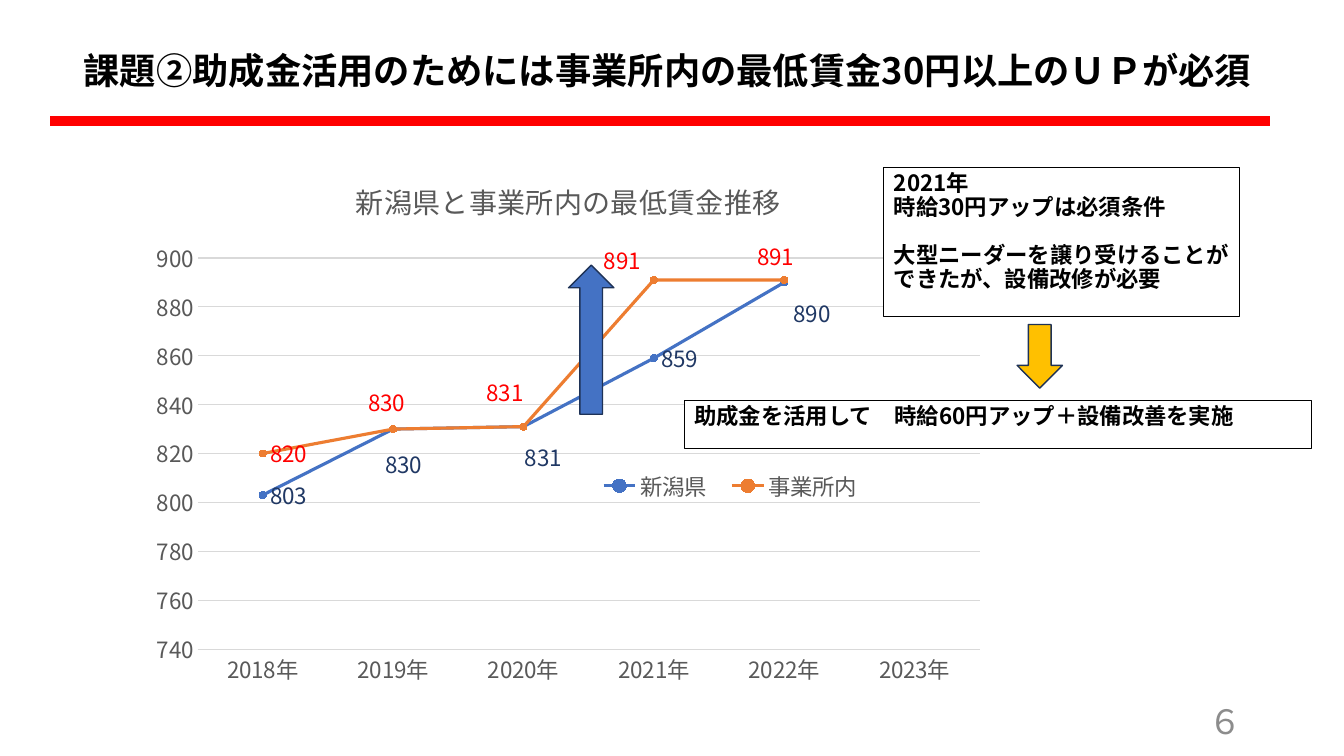
from dataclasses import dataclass, field

from lxml.etree import SubElement
from pptx import Presentation
from pptx.chart.data import CategoryChartData
from pptx.dml.color import RGBColor
from pptx.enum.chart import (XL_CHART_TYPE as ChartType, XL_LABEL_POSITION as LabelPosition,
                             XL_LEGEND_POSITION as LegendPosition, XL_MARKER_STYLE as Marker,
                             XL_TICK_MARK as TickMark)
from pptx.enum.shapes import MSO_CONNECTOR as Connector, MSO_SHAPE as ShapeKind
from pptx.enum.text import MSO_ANCHOR as Anchor, MSO_AUTO_SIZE as AutoSize, PP_ALIGN as Align
from pptx.oxml import parse_xml
from pptx.oxml.ns import nsdecls, qn
from pptx.util import Emu, Pt

PX = 9144  # 100 px to the inch
SLIDE_SIZE = Emu(12192000), Emu(6858000)
LABEL_EXTENSION = (
    f'<c:extLst {nsdecls("c")}><c:ext uri="{{CE6537A1-D6FC-4f65-9D91-7224C49458BB}}"'
    ' xmlns:c15="http://schemas.microsoft.com/office/drawing/2012/chart">'
    '<c15:showLeaderLines val="0"/></c:ext></c:extLst>')


@dataclass(frozen=True)
class Theme:
    font: str = "Noto Sans CJK JP"
    black: str = "000000"
    white: str = "FFFFFF"
    red: str = "FF0000"
    blue: str = "4472C4"
    orange: str = "ED7D31"
    gold: str = "FFC000"
    navy: str = "203864"
    arrow_line: str = "1E3256"
    chart_gray: str = "595959"
    grid_gray: str = "D9D9D9"
    number_gray: str = "8C8C8C"
    title_size: float = 25.9
    chart_title_size: float = 20
    body_size: float = 16
    number_size: float = 24


THEME = Theme()


@dataclass(frozen=True)
class Box:
    left: int
    top: int
    width: int
    height: int

    def emu(self) -> list[Emu]:
        return [Emu(v * PX) for v in (self.left, self.top, self.width, self.height)]


@dataclass(frozen=True)
class Wage:
    name: str
    values: tuple
    color: str
    label_color: str
    label_shifts: dict = field(default_factory=dict)  # point index -> (x, y) in px


@dataclass(frozen=True)
class Arrow:
    kind: ShapeKind
    box: Box
    fill: str


@dataclass(frozen=True)
class Note:
    box: Box
    lines: tuple
    gap_before: int = -1  # index of the line that follows a gap


CHART_BOX = Box(139, 155, 851, 584)
YEARS = [f"{year}年" for year in range(2018, 2024)]
WAGES = (
    Wage("新潟県", (803, 830, 831, 859, 890, None), THEME.blue, THEME.navy,
         {1: (-15, 35), 2: (-6, 30), 4: (2, 30)}),
    Wage("事業所内", (820, 830, 831, 891, 891, None), THEME.orange, THEME.red,
         {1: (-32, -27), 2: (-44, -34), 3: (-57, -20), 4: (-34, -24)}),
)
ARROWS = (
    Arrow(ShapeKind.UP_ARROW, Box(564, 263, 45, 148), THEME.blue),
    Arrow(ShapeKind.DOWN_ARROW, Box(1009, 322, 45, 63), THEME.gold),
)
NOTES = (
    Note(Box(679, 397, 622, 48), ("助成金を活用して　時給60円アップ＋設備改善を実施",)),
    Note(Box(877, 166, 353, 148),
         ("2021年", "時給30円アップは必須条件",
          "大型ニーダーを譲り受けることができたが、設備改修が必要"), gap_before=2),
)


def rgb(color: str) -> RGBColor:
    return RGBColor.from_string(color)


def style_font(font, size: float, color: str, bold: bool = False) -> None:
    font.size, font.bold, font.name = Pt(size), bold, THEME.font
    font.color.rgb = rgb(color)
    east_asian = SubElement(font._element, qn("a:ea"))
    east_asian.set("typeface", THEME.font)


def style_line(line, color: str, width: float) -> None:
    line.color.rgb = rgb(color)
    line.width = Pt(width)


def chart_layout(x: float, y: float, w: float = 0, h: float = 0, inner: bool = False,
                 edge: bool = True):
    """Manual layout from px within the chart frame."""
    parts = '<c:layoutTarget val="inner"/>' if inner else ""
    if edge:
        parts += '<c:xMode val="edge"/><c:yMode val="edge"/>'
    lengths = {"x": x / CHART_BOX.width, "y": y / CHART_BOX.height}
    if w:
        lengths |= {"w": w / CHART_BOX.width, "h": h / CHART_BOX.height}
    parts += "".join(f'<c:{key} val="{value:.4f}"/>' for key, value in lengths.items())
    return parse_xml(f'<c:layout {nsdecls("c")}><c:manualLayout>{parts}</c:manualLayout></c:layout>')


def set_layout(parent, layout, after: str | None = None) -> None:
    for existing in parent.findall(qn("c:layout")):
        parent.remove(existing)
    if after:
        parent.find(qn(after)).addnext(layout)
    else:
        parent.insert(0, layout)


def style_series(series, wage: Wage) -> None:
    series.smooth = False
    style_line(series.format.line, wage.color, 2.25)
    series.marker.style, series.marker.size = Marker.CIRCLE, 5
    series.marker.format.fill.solid()
    series.marker.format.fill.fore_color.rgb = rgb(wage.color)
    style_line(series.marker.format.line, wage.color, 0.75)
    labels = series.data_labels
    labels.show_value, labels.position = True, LabelPosition.RIGHT
    style_font(labels.font, THEME.body_size, wage.label_color)
    for index in wage.label_shifts:
        label = series.points[index].data_label
        label.position = LabelPosition.RIGHT
        style_font(label.font, THEME.body_size, wage.label_color)
    for element, shift in zip(labels._element.findall(qn("c:dLbl")), wage.label_shifts.values()):
        set_layout(element, chart_layout(*shift, edge=False), "c:idx")
    # Moved labels have no leader lines
    for leader in labels._element.findall(qn("c:showLeaderLines")):
        leader.set("val", "0")
    labels._element.append(parse_xml(LABEL_EXTENSION))


def add_wage_chart(slide) -> None:
    data = CategoryChartData()
    data.categories = YEARS
    for wage in WAGES:
        data.add_series(wage.name, wage.values)
    chart = slide.shapes.add_chart(ChartType.LINE_MARKERS, *CHART_BOX.emu(), data).chart
    style_font(chart.font, THEME.body_size, THEME.chart_gray)

    # Chart title, plot and legend places
    chart.has_title = True
    paragraph = chart.chart_title.text_frame.paragraphs[0]
    paragraph.text = "新潟県と事業所内の最低賃金推移"
    style_font(paragraph.font, THEME.chart_title_size, THEME.chart_gray)
    set_layout(chart.chart_title._element, chart_layout(209, 16), "c:tx")
    set_layout(chart._chartSpace.chart.plotArea, chart_layout(57, 101, 776, 388, inner=True))
    chart.has_legend = True
    chart.legend.position, chart.legend.include_in_layout = LegendPosition.BOTTOM, False
    style_font(chart.legend.font, THEME.body_size, THEME.chart_gray)
    set_layout(chart.legend._element, chart_layout(442, 310, 287, 34), "c:legendPos")

    # Axes
    for axis in (chart.category_axis, chart.value_axis):
        axis.major_tick_mark = axis.minor_tick_mark = TickMark.NONE
        style_font(axis.tick_labels.font, THEME.body_size, THEME.chart_gray)
    style_line(chart.category_axis.format.line, THEME.grid_gray, 0.75)
    values = chart.value_axis
    values.minimum_scale, values.maximum_scale, values.major_unit = 740, 900, 20
    values.format.line.fill.background()
    style_line(values.major_gridlines.format.line, THEME.grid_gray, 0.75)

    chart.plots[0].vary_by_categories = False
    for series, wage in zip(chart.plots[0].series, WAGES):
        style_series(series, wage)


def add_filled_shape(slide, kind: ShapeKind, box: Box, fill: str, line: str, width: float):
    shape = slide.shapes.add_shape(kind, *box.emu())
    shape.shadow.inherit = False
    shape.fill.solid()
    shape.fill.fore_color.rgb = rgb(fill)
    style_line(shape.line, line, width)
    return shape


def add_note(slide, note: Note) -> None:
    shape = add_filled_shape(slide, ShapeKind.RECTANGLE, note.box, THEME.white, THEME.black, 0.75)
    frame = shape.text_frame
    frame.word_wrap, frame.vertical_anchor = True, Anchor.TOP
    frame.text = "\n".join(note.lines)
    for index, paragraph in enumerate(frame.paragraphs):
        paragraph.alignment, paragraph.line_spacing = Align.LEFT, 0.9
        if index == note.gap_before:
            paragraph.space_before = Pt(17)
        style_font(paragraph.font, THEME.body_size, THEME.black, bold=True)


def add_title(slide) -> None:
    title = slide.shapes.title
    title.left, title.top, title.width, title.height = Box(73, 48, 1227, 71).emu()
    frame = title.text_frame
    frame.text = "課題②助成金活用のためには事業所内の最低賃金30円以上のＵＰが必須"
    frame.auto_size, frame.vertical_anchor = AutoSize.NONE, Anchor.TOP
    paragraph = frame.paragraphs[0]
    paragraph.alignment, paragraph.line_spacing = Align.LEFT, 0.9
    style_font(paragraph.font, THEME.title_size, THEME.black, bold=True)


def add_title_rule(slide) -> None:
    ends = [Emu(v * PX) for v in (50, 120, 1260, 120)]
    rule = slide.shapes.add_connector(Connector.STRAIGHT, *ends)
    style_line(rule.line, THEME.red, 6.75)
    SubElement(rule._element.spPr, qn("a:effectLst"))


def add_page_number(slide) -> None:
    frame = slide.shapes.add_textbox(*Box(942, 695, 300, 40).emu()).text_frame
    frame.word_wrap, frame.vertical_anchor = True, Anchor.MIDDLE
    paragraph = frame.paragraphs[0]
    paragraph.text, paragraph.alignment = "６", Align.RIGHT
    style_font(paragraph.font, THEME.number_size, THEME.number_gray)


def main() -> None:
    presentation = Presentation()
    presentation.slide_width, presentation.slide_height = SLIDE_SIZE
    slide = presentation.slides.add_slide(presentation.slide_layouts[5])
    add_title_rule(slide)
    add_title(slide)
    add_wage_chart(slide)
    for arrow in ARROWS:
        add_filled_shape(slide, arrow.kind, arrow.box, arrow.fill, THEME.arrow_line, 1)
    for note in NOTES:
        add_note(slide, note)
    add_page_number(slide)
    presentation.save("out.pptx")


if __name__ == "__main__":
    main()
